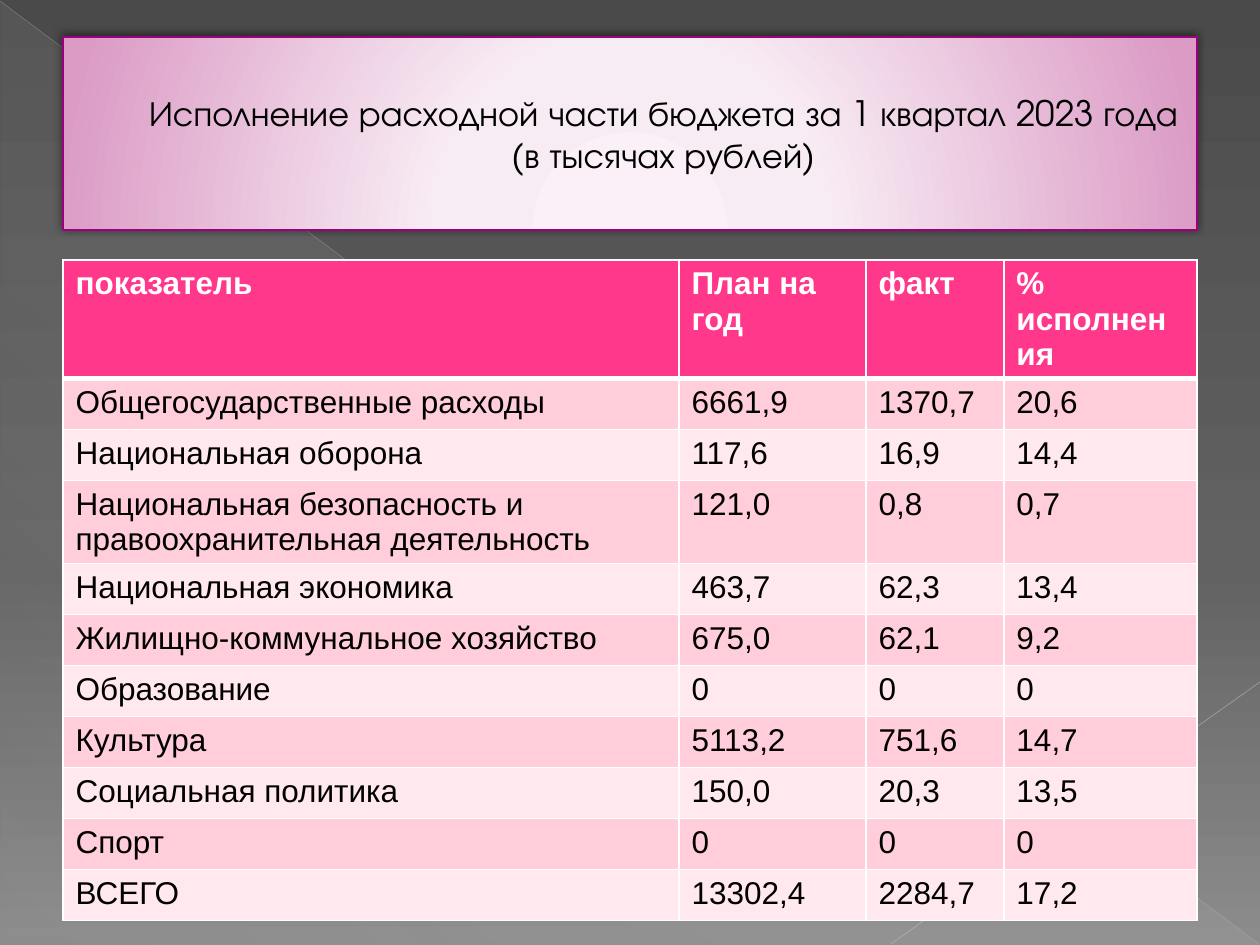
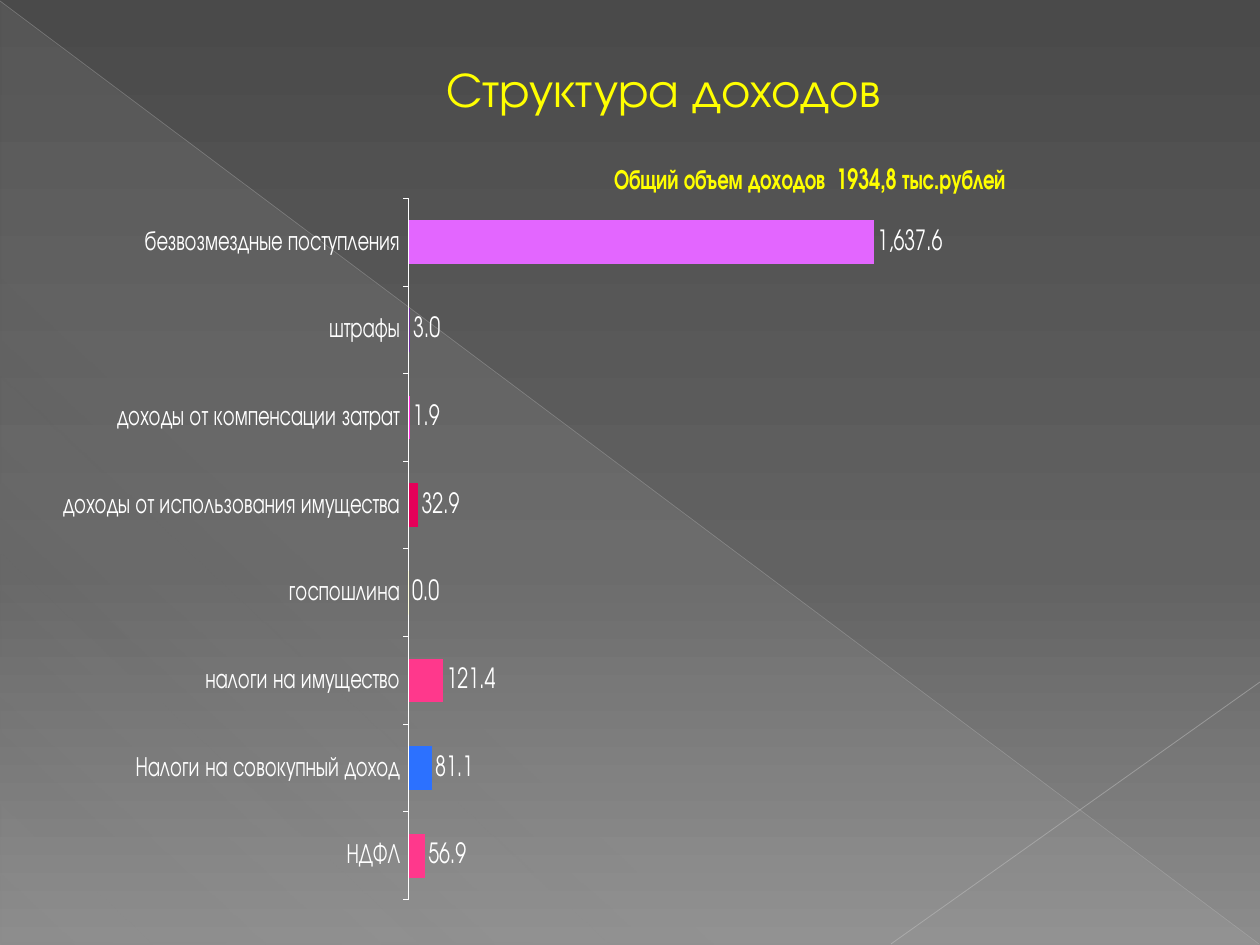
"""Build two budget slides: a table of expenses and a chart of income."""
import pptx
import pptx.chart.data
import pptx.dml.color
import pptx.enum.chart
import pptx.enum.shapes
import pptx.enum.text
import pptx.oxml
import pptx.oxml.ns
import pptx.util

RGB = pptx.dml.color.RGBColor
EMU_PER_PX = 914400 / 126
NS = pptx.oxml.ns.nsdecls("a", "c")

WHITE = RGB(0xFF, 0xFF, 0xFF)
BLACK = RGB(0x00, 0x00, 0x00)
YELLOW = RGB(0xFF, 0xFF, 0x00)
PINK = RGB(0xFF, 0x38, 0x8C)
PURPLE = RGB(0x9C, 0x00, 0x7F)
VEIL = RGB(0xD2, 0xD2, 0xD2)
DIAGONAL = RGB(0xBF, 0xBF, 0xBF)
CORNER = RGB(0xC6, 0xC6, 0xC6)
BANDS = [RGB(0xFF, 0xE8, 0xEE), RGB(0xFF, 0xCE, 0xDA)]
BG_STOPS = [(0, RGB(0x4A, 0x4A, 0x4A), 100), (60, RGB(0x62, 0x62, 0x62), 100),
            (100, RGB(0x8C, 0x8C, 0x8C), 100)]
VEIL_STOPS = [(0, VEIL, 10), (70, VEIL, 8), (100, VEIL, 1)]
BAND_STOPS = [(0, RGB(0xFB, 0xF0, 0xF7), 100), (34, RGB(0xF8, 0xEC, 0xF4), 100),
              (100, RGB(0xDB, 0x9B, 0xC5), 100)]
POINT_COLORS = {1: RGB(0x2C, 0x71, 0xFF), 3: YELLOW, 4: RGB(0xE4, 0x00, 0x59),
                5: RGB(0xFF, 0x2B, 0xD8), 6: RGB(0x70, 0x30, 0xA0),
                7: RGB(0xE3, 0x66, 0xFF)}

TITLE = {"name": "TeX Gyre Adventor", "size": pptx.util.Pt(20), "color": BLACK}
BIG_TITLE = {**TITLE, "size": pptx.util.Pt(28), "color": YELLOW}
CHART_TEXT = {**TITLE, "size": pptx.util.Pt(15.9), "color": WHITE}
CHART_TITLE = {**CHART_TEXT, "bold": True, "color": YELLOW}
CELL = {"name": "Arial", "size": pptx.util.Pt(18), "bold": False, "color": BLACK}
HEAD_CELL = {**CELL, "bold": True, "color": WHITE}

COL_WIDTHS = [616, 187, 138, 193]
ROW_HEIGHT = 51
EXPENSES = [
    ("показатель", "План на год", "факт", "% исполнения"),
    ("Общегосударственные расходы", "6661,9", "1370,7", "20,6"),
    ("Национальная оборона", "117,6", "16,9", "14,4"),
    ("Национальная безопасность и правоохранительная деятельность",
     "121,0", "0,8", "0,7"),
    ("Национальная экономика", "463,7", "62,3", "13,4"),
    ("Жилищно-коммунальное хозяйство", "675,0", "62,1", "9,2"),
    ("Образование", "0", "0", "0"),
    ("Культура", "5113,2", "751,6", "14,7"),
    ("Социальная политика", "150,0", "20,3", "13,5"),
    ("Спорт", "0", "0", "0"),
    ("ВСЕГО", "13302,4", "2284,7", "17,2"),
]
INCOME = {
    "НДФЛ": 56.9,
    "Налоги на совокупный доход": 81.1,
    "налоги на имущество": 121.4,
    "госпошлина": 0,
    "доходы от использования имущества": 32.9,
    "доходы от компенсации затрат": 1.9,
    "штрафы": 3,
    "безвозмездные поступления": 1637.6,
}


def px(*lengths):
    """Turn px lengths into a list of EMU."""
    return [pptx.util.Emu(round(n * EMU_PER_PX)) for n in lengths]


def set_font(font, fmt):
    """Apply a dict of format values to a font."""
    for key, value in fmt.items():
        if key == "color":
            font.color.rgb = value
        else:
            setattr(font, key, value)


def set_gradient(fill, owner, stops, direction):
    """Give the owner element a gradient of (position, colour, opacity) stops."""
    fill.background()
    gs = "".join(
        f'<a:gs pos="{pos * 1000}"><a:srgbClr val="{color}">'
        f'<a:alpha val="{alpha * 1000}"/></a:srgbClr></a:gs>'
        for pos, color, alpha in stops)
    grad = pptx.oxml.parse_xml(
        f'<a:gradFill {NS} rotWithShape="1"><a:gsLst>{gs}</a:gsLst>{direction}</a:gradFill>')
    old = owner.xpath(".//a:noFill")[0]
    old.getparent().replace(old, grad)


def linear(angle):
    """Return the XML of a linear gradient direction."""
    return f'<a:lin ang="{angle * 60000}" scaled="0"/>'


def add_line(slide, ends, color, width, alpha):
    """Draw a thin translucent line."""
    line = slide.shapes.add_connector(
        pptx.enum.shapes.MSO_CONNECTOR.STRAIGHT, *px(*ends))
    line.line.color.rgb = color
    line.line.width = pptx.util.Pt(width)
    line.element.xpath(".//a:ln//a:srgbClr")[0].append(
        pptx.oxml.parse_xml(f'<a:alpha {NS} val="{alpha * 1000}"/>'))
    line.element.spPr.append(pptx.oxml.parse_xml(f"<a:effectLst {NS}/>"))


def add_backdrop_slide(prs):
    """Add a blank slide with the shared background and decor."""
    slide = prs.slides.add_slide(prs.slide_layouts[6])
    set_gradient(slide.background.fill, slide.element.cSld.bg, BG_STOPS, linear(90))
    veil = slide.shapes.add_shape(
        pptx.enum.shapes.MSO_SHAPE.RIGHT_TRIANGLE, *px(1, 2, 1258, 942))
    veil.shadow.inherit = False
    set_gradient(veil.fill, veil.element.spPr, VEIL_STOPS, linear(133))
    veil.line.fill.background()
    add_line(slide, (0, 1, 1259, 944), DIAGONAL, 0.39, 35)
    add_line(slide, (1260, 682, 891, 944), CORNER, 0.47, 45)
    return slide


def add_title(slide, text, box, fmt):
    """Add a centred title and return its shape."""
    sp = slide.shapes.add_shape(pptx.enum.shapes.MSO_SHAPE.RECTANGLE, *px(*box))
    sp.shadow.inherit = False
    sp.fill.background()
    sp.line.fill.background()
    tf = sp.text_frame
    tf.word_wrap = True
    tf.vertical_anchor = pptx.enum.text.MSO_ANCHOR.MIDDLE
    p = tf.paragraphs[0]
    p.alignment = pptx.enum.text.PP_ALIGN.CENTER
    p._p.get_or_add_pPr().set("marL", str(px(67)[0]))
    r = p.add_run()
    r.text = text
    set_font(r.font, fmt)
    return sp


def add_band(sp):
    """Turn a title shape into a glowing framed band."""
    set_gradient(sp.fill, sp.element.spPr, BAND_STOPS,
                 '<a:path path="circle">'
                 '<a:fillToRect l="50000" t="155000" r="50000" b="-55000"/></a:path>')
    sp.line.color.rgb = PURPLE
    sp.line.width = pptx.util.Pt(0.75)
    sp.element.xpath("./p:spPr/a:effectLst")[0].append(pptx.oxml.parse_xml(
        f'<a:outerShdw {NS} blurRad="63500" dist="25400" dir="14700000" rotWithShape="0">'
        '<a:srgbClr val="000000"><a:alpha val="50000"/></a:srgbClr></a:outerShdw>'))


def set_borders(cell, widths):
    """Draw white cell borders, widths in points by side."""
    for side, width in widths.items():
        cell._tc.get_or_add_tcPr().append(pptx.oxml.parse_xml(
            f'<a:ln{side} {NS} w="{pptx.util.Pt(width)}"><a:solidFill>'
            f'<a:srgbClr val="{WHITE}"/></a:solidFill></a:ln{side}>'))


def add_expense_table(slide, left, top):
    """Add the banded table of expenses."""
    table = slide.shapes.add_table(
        len(EXPENSES), len(COL_WIDTHS),
        *px(left, top, sum(COL_WIDTHS), ROW_HEIGHT * len(EXPENSES))).table
    for col, width in zip(table.columns, px(*COL_WIDTHS)):
        col.width = width
    for i, row in enumerate(EXPENSES):
        table.rows[i].height = px(ROW_HEIGHT)[0]
        for j, text in enumerate(row):
            cell = table.cell(i, j)
            set_borders(cell, {"L": 1, "R": 1, "T": 3 if i == 1 else 1,
                               "B": 1 if i else 3})
            cell.fill.solid()
            cell.fill.fore_color.rgb = BANDS[i % 2] if i else PINK
            r = cell.text_frame.paragraphs[0].add_run()
            r.text = text
            set_font(r.font, CELL if i else HEAD_CELL)


def set_plot_layout(chart, **layout):
    """Place the inner plot area by fractions of the chart."""
    area = chart.element.xpath(".//c:plotArea")[0]
    for old in area.xpath("./c:layout"):
        area.remove(old)
    modes = "".join(f'<c:{k}Mode val="edge"/>' for k in "xy")
    sizes = "".join(f'<c:{k} val="{v}"/>' for k, v in layout.items())
    area.insert(0, pptx.oxml.parse_xml(
        f'<c:layout {NS}><c:manualLayout><c:layoutTarget val="inner"/>'
        f"{modes}{sizes}</c:manualLayout></c:layout>"))


def add_income_chart(slide, box):
    """Add the bar chart of income by source."""
    data = pptx.chart.data.CategoryChartData()
    data.categories = list(INCOME)
    data.add_series("Series 1", list(INCOME.values()))
    chart = slide.shapes.add_chart(
        pptx.enum.chart.XL_CHART_TYPE.BAR_CLUSTERED, *px(*box), data).chart
    set_font(chart.font, CHART_TEXT)
    chart.has_legend = False
    r = chart.chart_title.text_frame.paragraphs[0].add_run()
    r.text = "Общий объем доходов  1934,8 тыс.рублей"
    set_font(r.font, CHART_TITLE)
    set_plot_layout(chart, x=0.012, y=0.076, w=0.622, h=0.868)

    axis = chart.value_axis
    for key, value in {"visible": False, "has_major_gridlines": False,
                       "minimum_scale": 0, "major_unit": 100}.items():
        setattr(axis, key, value)
    axis = chart.category_axis
    axis.major_tick_mark = pptx.enum.chart.XL_TICK_MARK.OUTSIDE
    axis.format.line.color.rgb = WHITE

    plot = chart.plots[0]
    for key, value in {"gap_width": 100, "vary_by_categories": False,
                       "has_data_labels": True}.items():
        setattr(plot, key, value)
    labels = plot.data_labels
    for key, value in {"show_value": True, "number_format": "#,##0.0",
                       "number_format_is_linked": False}.items():
        setattr(labels, key, value)
    set_font(labels.font, CHART_TEXT)

    series = plot.series[0]
    fills = {series: PINK}
    fills.update({series.points[i]: color for i, color in POINT_COLORS.items()})
    for item, color in fills.items():
        item.format.fill.solid()
        item.format.fill.fore_color.rgb = color


def main():
    """Build and save the presentation."""
    prs = pptx.Presentation()
    prs.slide_width, prs.slide_height = px(1260, 945)

    slide = add_backdrop_slide(prs)
    add_band(add_title(
        slide, "Исполнение расходной части бюджета за 1 квартал 2023 года (в тысячах рублей)",
        (63, 37, 1134, 193), TITLE))
    add_expense_table(slide, 63, 260)

    slide = add_backdrop_slide(prs)
    add_title(slide, "Структура доходов", (63, 38, 1134, 100), BIG_TITLE)
    add_income_chart(slide, (63, 137, 1158, 808))

    prs.save("out.pptx")


if __name__ == "__main__":
    main()
